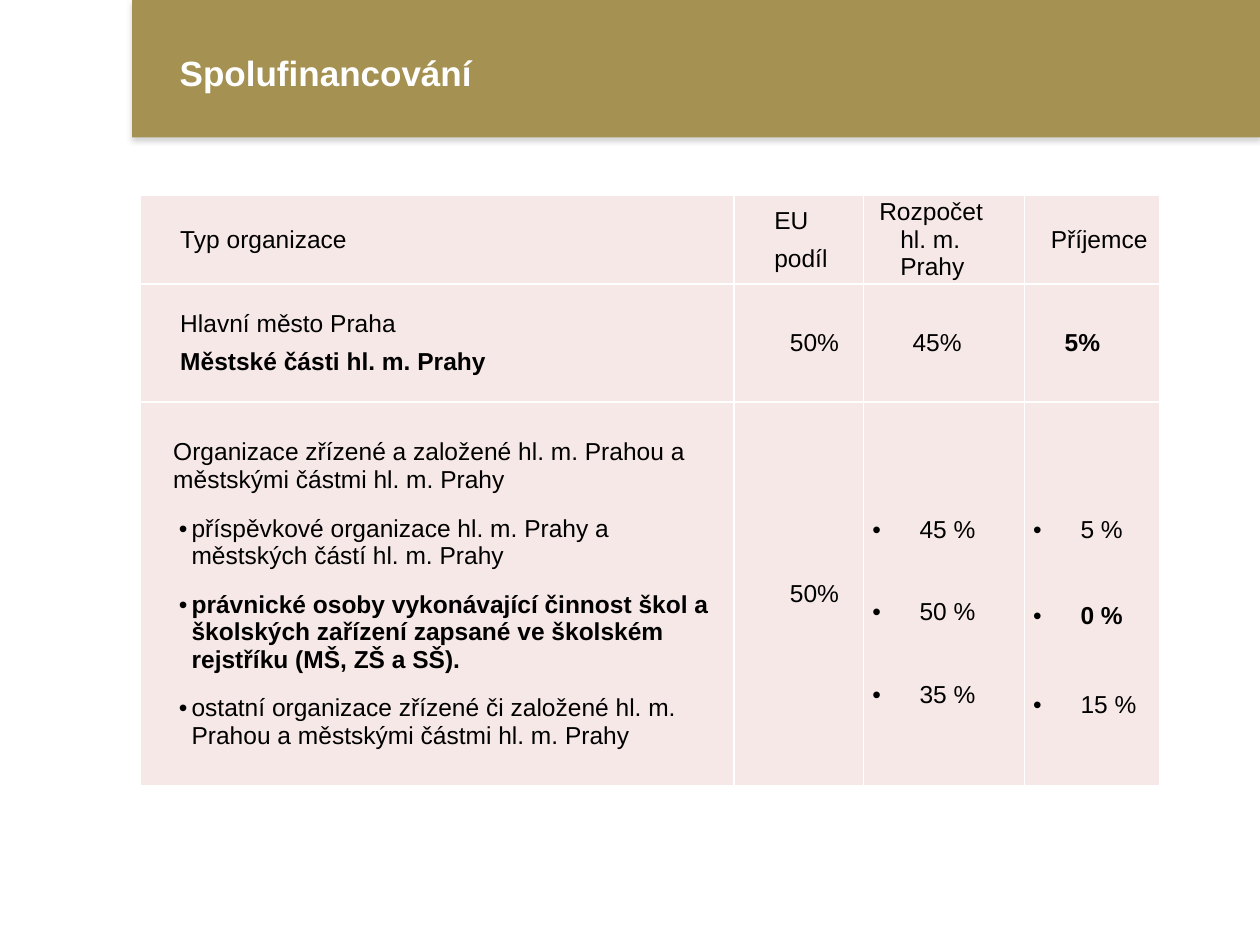
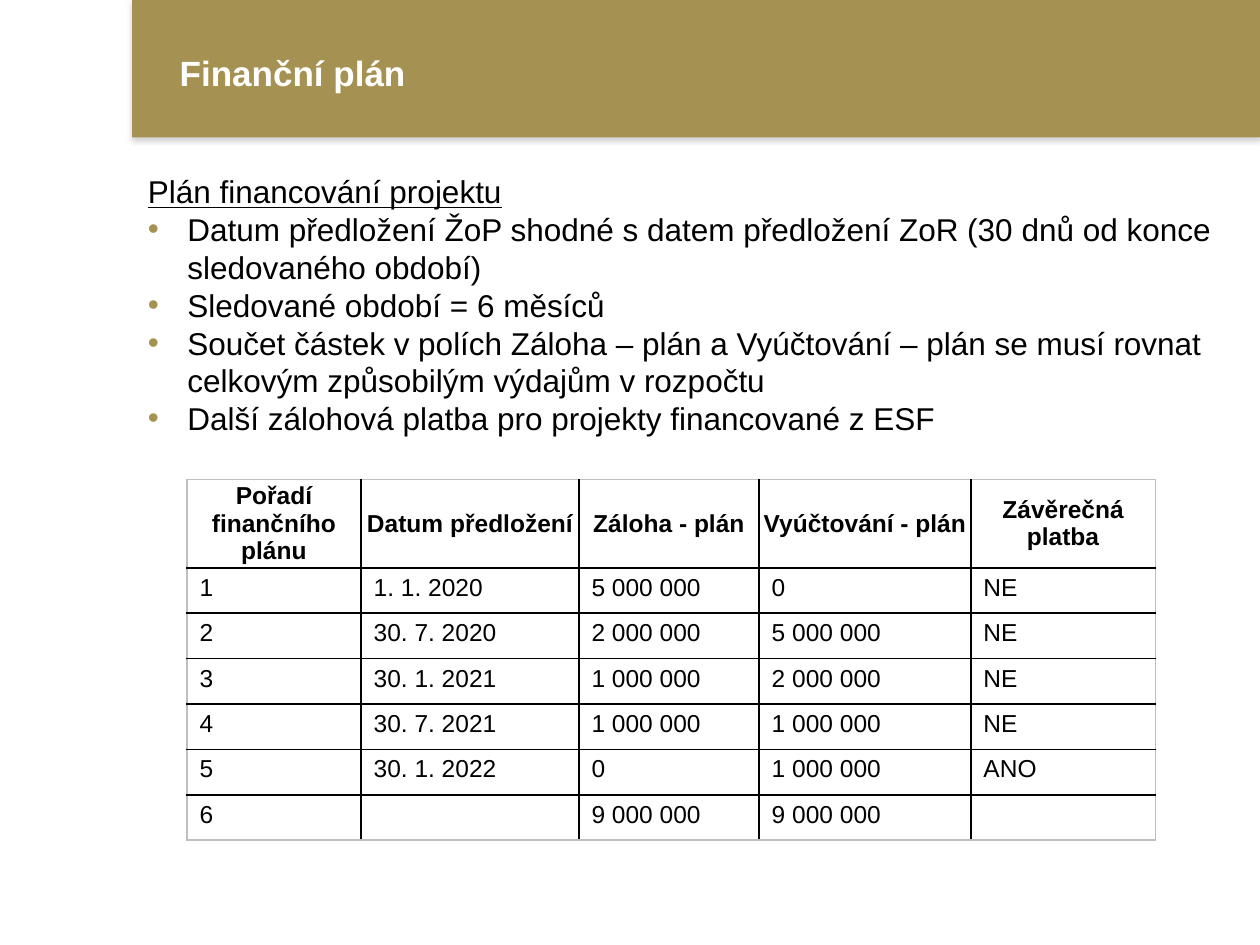
from lxml import etree
from pptx import Presentation
from pptx.dml.color import RGBColor
from pptx.enum import shapes, text
from pptx.oxml import ns
from pptx.util import Pt

GOLD = RGBColor(0xA5, 0x92, 0x53)
WHITE = RGBColor(0xFF, 0xFF, 0xFF)
BLACK = RGBColor(0, 0, 0)
PINK = RGBColor(0xF7, 0xE8, 0xE8)
GREY = RGBColor(0x80, 0x80, 0x80)
SILVER = RGBColor(0xBF, 0xBF, 0xBF)
FONT = "Arial"
CENTER = text.PP_ALIGN.CENTER
MIDDLE = text.MSO_ANCHOR.MIDDLE


def write(frame, paragraphs, size, color=BLACK, bullet_color=None):
    """Fill a text frame from (text, format) pairs; indents are in points."""
    for index, (words, form) in enumerate(paragraphs):
        paragraph = frame.paragraphs[0] if index == 0 else frame.add_paragraph()
        for name in ("alignment", "space_before", "space_after"):
            if name in form:
                setattr(paragraph, name, form[name])
        properties = paragraph._p.get_or_add_pPr()
        left, first = form.get("indent", (0, 0))
        properties.set("marL", str(Pt(left)))
        properties.set("indent", str(Pt(first)))
        if form.get("bullet"):
            if bullet_color is not None:
                holder = etree.SubElement(properties, ns.qn("a:buClr"))
                etree.SubElement(holder, ns.qn("a:srgbClr"), val=str(bullet_color))
            etree.SubElement(properties, ns.qn("a:buFont"), typeface=FONT)
            etree.SubElement(properties, ns.qn("a:buChar"), char="•")
        run = paragraph.add_run()
        run.text = words
        font = {"name": FONT, "size": Pt(size), "bold": form.get("bold", False),
                "underline": form.get("underline", False)}
        for name, value in font.items():
            setattr(run.font, name, value)
        run.font.color.rgb = color


def add_grid(slide, left, top, widths, heights, inner, outer):
    """Add an unstyled table with 1 pt borders and return it."""
    table = slide.shapes.add_table(
        len(heights), len(widths), Pt(left), Pt(top),
        Pt(sum(widths)), Pt(sum(heights))).table
    table.first_row = table.horz_banding = False
    for column, width in zip(table.columns, widths):
        column.width = Pt(width)
    for row, height in zip(table.rows, heights):
        row.height = Pt(height)
    for r in range(len(heights)):
        for c in range(len(widths)):
            cell = table.cell(r, c)
            properties = cell._tc.get_or_add_tcPr()
            on_edge = {"a:lnL": c == 0, "a:lnR": c == len(widths) - 1,
                       "a:lnT": r == 0, "a:lnB": r == len(heights) - 1}
            for side, edge in on_edge.items():
                line = etree.SubElement(properties, ns.qn(side), w=str(Pt(1)))
                fill = etree.SubElement(line, ns.qn("a:solidFill"))
                etree.SubElement(fill, ns.qn("a:srgbClr"), val=str(outer if edge else inner))
            cell.fill.background()
    return table


presentation = Presentation()
presentation.slide_width, presentation.slide_height = Pt(720), Pt(540)

# Gold band and title on every slide
slides = []
for title in ("Spolufinancování", "Finanční plán"):
    slide = presentation.slides.add_slide(presentation.slide_layouts[6])
    band = slide.shapes.add_shape(
        shapes.MSO_SHAPE.RECTANGLE, Pt(75.5), 0, Pt(644.5), Pt(78.5))
    band.fill.solid()
    band.fill.fore_color.rgb = GOLD
    band.line.fill.background()
    band.shadow.inherit = False
    effects = band._element.spPr.find(ns.qn("a:effectLst"))
    shadow = etree.SubElement(effects, ns.qn("a:outerShdw"), blurRad=str(Pt(3.1)),
                              dist=str(Pt(1.8)), dir="5400000", rotWithShape="0")
    tint = etree.SubElement(shadow, ns.qn("a:srgbClr"), val=str(GREY))
    etree.SubElement(tint, ns.qn("a:alpha"), val="35000")
    frame = slide.shapes.add_textbox(Pt(95.6), Pt(29), Pt(588), Pt(25)).text_frame
    frame.word_wrap = True
    frame.vertical_anchor = MIDDLE
    write(frame, [(title, {"bold": True})], 20, WHITE)
    slides.append(slide)
sharing_slide, plan_slide = slides

# Co-financing shares
AFTER = {"space_after": Pt(6)}
LABEL = {**AFTER, "indent": (50, -32)}
SHARE = {**LABEL, "alignment": CENTER}
BUDGET = {**AFTER, "indent": (50, -27)}
ITEM = {**AFTER, "indent": (24.5, -7.2), "space_before": Pt(6), "bullet": True}
VALUE = {"indent": (27, -27), "bullet": True}
BOLD = {"bold": True}

sharing_rows = [
    [[("Typ organizace", LABEL)],
     [("EU", LABEL), ("podíl", LABEL)],
     [("Rozpočet hl. m. Prahy", {**AFTER, "indent": (16, -12)})],
     [("Příjemce", {**AFTER, "indent": (50, -40)})]],
    [[("Hlavní město Praha", LABEL), ("Městské části hl. m. Prahy", LABEL | BOLD)],
     [("50%", SHARE)],
     [("45%", BUDGET)],
     [("5%", LABEL | BOLD)]],
    [[("Organizace zřízené a založené hl. m. Prahou a městskými částmi hl. m. Prahy",
       {**AFTER, "indent": (14, 0)}),
      ("příspěvkové organizace hl. m. Prahy a městských částí hl. m. Prahy", ITEM),
      ("právnické osoby vykonávající činnost škol a školských zařízení zapsané "
       "ve školském rejstříku (MŠ, ZŠ a SŠ).", ITEM | BOLD),
      ("ostatní organizace zřízené či založené hl. m. Prahou a městskými částmi "
       "hl. m. Prahy", ITEM)],
     [("50%", SHARE)],
     [("45 %", VALUE),
      ("50 %", {**VALUE, "space_before": Pt(31.5)}),
      ("35 %", {**VALUE, "space_before": Pt(31.5)})],
     [("5 %", VALUE),
      ("0 %", {**VALUE, **BOLD, "space_before": Pt(33.5)}),
      ("15 %", {**VALUE, "space_before": Pt(35.5)})]],
]
table = add_grid(sharing_slide, 80, 111.8, [339.5, 74, 92, 77.5], [48, 67.5, 219.5],
                 WHITE, WHITE)
for r, row in enumerate(sharing_rows):
    for c, paragraphs in enumerate(row):
        cell = table.cell(r, c)
        cell.fill.solid()
        cell.fill.fore_color.rgb = PINK
        cell.margin_left = cell.margin_right = Pt(5)
        cell.margin_top = cell.margin_bottom = 0
        cell.vertical_anchor = MIDDLE
        if paragraphs[0][1] is VALUE:
            cell.vertical_anchor = text.MSO_ANCHOR.TOP
            cell.margin_top = Pt(65)
        write(cell.text_frame, paragraphs, 14)

# Financial plan: rules
POINT = {"indent": (22.5, -22.5), "bullet": True}
rules = [
    "Datum předložení ŽoP shodné s datem předložení ZoR (30 dnů od konce sledovaného období)",
    "Sledované období = 6 měsíců",
    "Součet částek v polích Záloha – plán a Vyúčtování – plán se musí rovnat celkovým "
    "způsobilým výdajům v rozpočtu",
    "Další zálohová platba pro projekty financované z ESF",
]
frame = plan_slide.shapes.add_textbox(Pt(77.5), Pt(95), Pt(636.5), Pt(160)).text_frame
frame.word_wrap = True
write(frame, [("Plán financování projektu", {"underline": True})]
      + [(rule, POINT) for rule in rules], 18, bullet_color=GOLD)

# Financial plan: schedule
schedule = [
    ["Pořadí finančního plánu", "Datum předložení", "Záloha - plán",
     "Vyúčtování - plán", "Závěrečná platba"],
    ["1", "1. 1. 2020", "5 000 000", "0", "NE"],
    ["2", "30. 7. 2020", "2 000 000", "5 000 000", "NE"],
    ["3", "30. 1. 2021", "1 000 000", "2 000 000", "NE"],
    ["4", "30. 7. 2021", "1 000 000", "1 000 000", "NE"],
    ["5", "30. 1. 2022", "0", "1 000 000", "ANO"],
    ["6", "", "9 000 000", "9 000 000", ""],
]
table = add_grid(plan_slide, 106.8, 274, [99.5, 124.5, 103, 121, 105.5],
                 [50.5] + [25.95] * 6, BLACK, SILVER)
for r, row in enumerate(schedule):
    for c, words in enumerate(row):
        cell = table.cell(r, c)
        if r == 0 or not words:
            cell.margin_left = cell.margin_right = cell.margin_top = cell.margin_bottom = 0
        if r == 0:
            cell.vertical_anchor = MIDDLE
        if words:
            form = {"alignment": CENTER, "bold": True} if r == 0 else {}
            write(cell.text_frame, [(words, form)], 14)

presentation.save("out.pptx")
